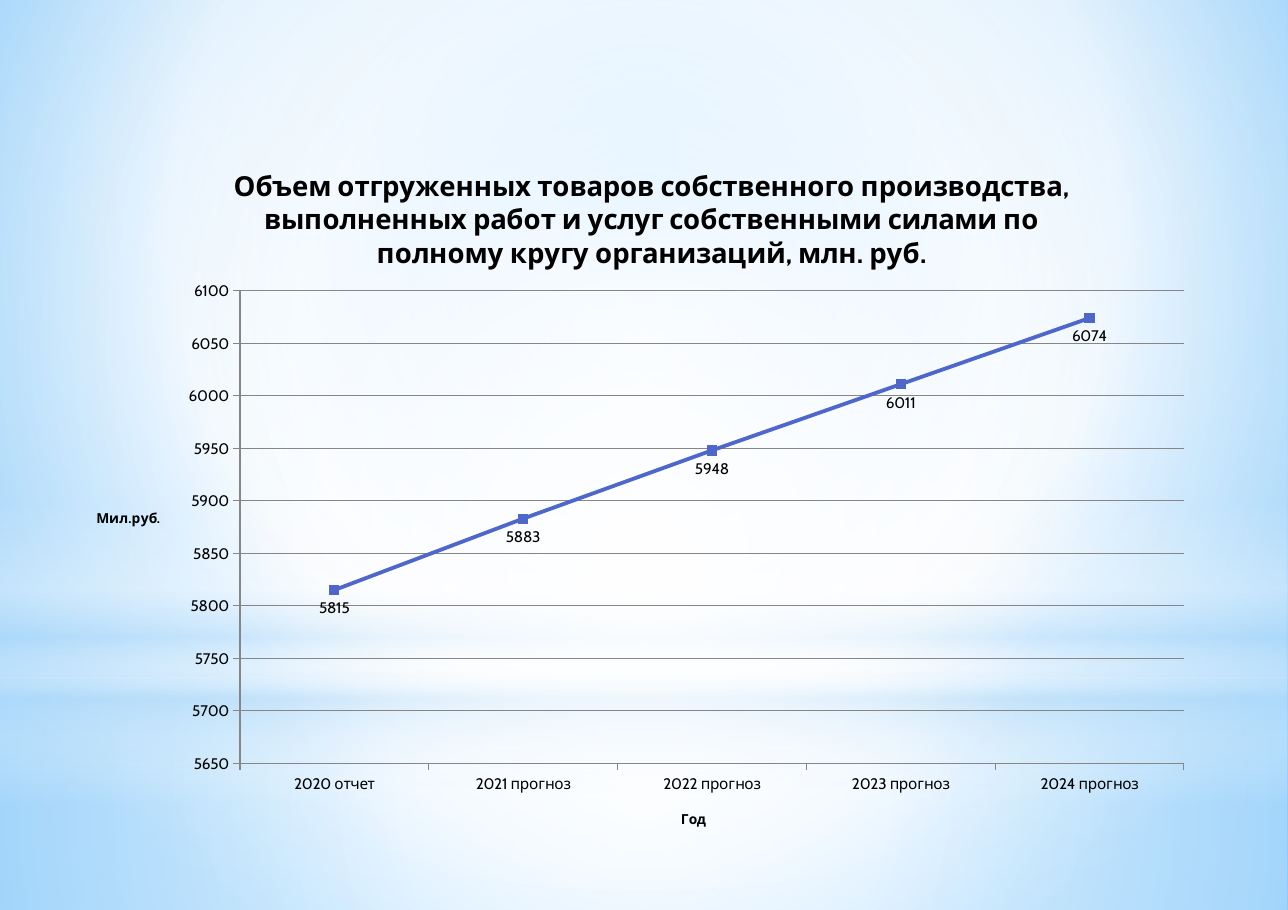
from lxml import etree
from pptx import Presentation
from pptx.chart.data import CategoryChartData
from pptx.dml.color import RGBColor
from pptx.enum.chart import (XL_CHART_TYPE, XL_LABEL_POSITION,
                             XL_MARKER_STYLE, XL_TICK_MARK)
from pptx.enum.shapes import MSO_SHAPE
from pptx.oxml.ns import qn
from pptx.util import Pt

LINE = XL_CHART_TYPE.LINE_MARKERS
BELOW = XL_LABEL_POSITION.BELOW
SQUARE = XL_MARKER_STYLE.SQUARE
OUTSIDE = XL_TICK_MARK.OUTSIDE
RECT = MSO_SHAPE.RECTANGLE
OVAL = MSO_SHAPE.OVAL

WIDTH, HEIGHT = 841.68, 594.72
FONT = "Cabin"
COLORS = {"white": "FFFFFF", "pale": "B4DCFA", "sky": "9ED5FF",
          "deep": "5BB9FF", "black": "000000", "grid": "868686",
          "line": "4E67C8"}
CENTER = (50, 50, 50, 50)
TITLE = ("Объем отгруженных товаров собственного производства, "
         "выполненных работ и услуг собственными силами по "
         "полному кругу организаций, млн. руб.")
DATA = {"2020 отчет": 5815, "2021 прогноз": 5883, "2022 прогноз": 5948,
        "2023 прогноз": 6011, "2024 прогноз": 6074}


def color(name):
    """Return the named colour."""
    return RGBColor.from_string(COLORS[name])


def add_fade(owner, fill, stops, focus=None):
    """Fill with (place, colour, opacity) stops, round if a focus is given."""
    fill.solid()
    old = owner.find(".//" + qn("a:solidFill"))
    grad = etree.Element(qn("a:gradFill"), rotWithShape="1")
    steps = etree.SubElement(grad, qn("a:gsLst"))
    for place, name, alpha in stops:
        stop = etree.SubElement(steps, qn("a:gs"), pos=str(place * 1000))
        tint = etree.SubElement(stop, qn("a:srgbClr"), val=COLORS[name])
        etree.SubElement(tint, qn("a:alpha"), val=str(alpha * 1000))
    if focus:
        way = etree.SubElement(grad, qn("a:path"), path="circle")
        sides = {s: str(v * 1000) for s, v in zip("ltrb", focus)}
        etree.SubElement(way, qn("a:fillToRect"), **sides)
    else:
        etree.SubElement(grad, qn("a:lin"), ang="5400000", scaled="0")
    old.getparent().replace(old, grad)


def add_glow(slide, kind, top, height, stops, focus=None):
    """Add a full-width soft shape."""
    shape = slide.shapes.add_shape(kind, 0, Pt(top), Pt(WIDTH), Pt(height))
    shape.shadow.inherit = False
    shape.line.fill.background()
    add_fade(shape._element, shape.fill, stops, focus)


def set_place(owner, index, inner=False, **spots):
    """Give a chart part a fixed place, in shares of the chart."""
    for old in owner.findall(qn("c:layout")):
        owner.remove(old)
    layout = etree.Element(qn("c:layout"))
    manual = etree.SubElement(layout, qn("c:manualLayout"))
    if inner:
        etree.SubElement(manual, qn("c:layoutTarget"), val="inner")
    for mode in ("xMode", "yMode"):
        etree.SubElement(manual, qn("c:" + mode), val="edge")
    for key, value in spots.items():
        etree.SubElement(manual, qn("c:" + key), val=str(value))
    owner.insert(index, layout)


def set_title(title, text, size, x, y):
    """Write and place a level bold title."""
    title.text_frame.text = text
    font = title.text_frame.paragraphs[0].runs[0].font
    font.name, font.size, font.bold = FONT, Pt(size), True
    font.color.rgb = color("black")
    body = title._element.find(".//" + qn("a:bodyPr"))
    body.set("rot", "0")
    body.set("vert", "horz")
    set_place(title._element, 1, x=x, y=y)


def set_line(line, name, width):
    """Set the colour and width of a line."""
    line.color.rgb = color(name)
    line.width = Pt(width)


def set_axis(axis, text, x, y):
    """Style an axis and give it a title."""
    axis.major_tick_mark = OUTSIDE
    set_line(axis.format.line, "grid", 0.75)
    set_title(axis.axis_title, text, 9, x, y)


def style_series(series):
    """Style the line, its markers and its labels."""
    series.smooth = False
    set_line(series.format.line, "line", 2.5)
    series.marker.style = SQUARE
    series.marker.size = 6
    series.marker.format.fill.solid()
    series.marker.format.fill.fore_color.rgb = color("line")
    set_line(series.marker.format.line, "line", 0.75)
    labels = series.data_labels
    labels.show_value = True
    labels.position = BELOW
    labels.number_format = "0"
    labels.number_format_is_linked = False


def add_graph(slide):
    """Add the line chart of shipped goods."""
    data = CategoryChartData(number_format="0")
    data.categories = list(DATA)
    data.add_series("Series 1", list(DATA.values()))
    chart = slide.shapes.add_chart(LINE, Pt(54), Pt(87.12), Pt(734.4),
                                   Pt(468), data).chart
    chart.has_legend = False
    chart.font.name, chart.font.size = FONT, Pt(10)
    chart.font.color.rgb = color("black")
    set_title(chart.chart_title, TITLE, 18, 0.13, 0.04)
    set_axis(chart.category_axis, "Год", 0.53, 0.94)
    axis = chart.value_axis
    set_axis(axis, "Мил.руб.", 0.01, 0.52)
    axis.minimum_scale, axis.maximum_scale = 5650, 6100
    axis.major_unit = 50
    axis.tick_labels.number_format = "0"
    axis.tick_labels.number_format_is_linked = False
    set_line(axis.major_gridlines.format.line, "grid", 0.75)
    chart.plots[0].vary_by_categories = False
    style_series(chart.plots[0].series[0])
    plot = chart._chartSpace.find(".//" + qn("c:plotArea"))
    set_place(plot, 0, inner=True, x=0.14, y=0.22, w=0.84, h=0.66)


def main():
    """Build the slide."""
    deck = Presentation()
    deck.slide_width, deck.slide_height = Pt(WIDTH), Pt(HEIGHT)
    slide = deck.slides.add_slide(deck.slide_layouts[6])
    add_fade(slide._element, slide.background.fill,
             [(0, "sky", 100), (60, "white", 100), (100, "deep", 100)],
             (20, 10, 20, 60))
    add_glow(slide, RECT, 442.8, 151.92,
             [(0, "white", 91), (37, "white", 76), (100, "pale", 79)], CENTER)
    add_glow(slide, RECT, 0, 442.8,
             [(0, "white", 89), (48, "white", 62), (100, "pale", 79)], CENTER)
    add_glow(slide, RECT, 326.88, 198,
             [(0, "white", 0), (29, "white", 30), (45, "pale", 40),
              (55, "white", 26), (65, "pale", 60), (100, "white", 0)])
    add_glow(slide, OVAL, 138.96, 442.8,
             [(0, "white", 100), (56, "white", 0)], CENTER)
    add_graph(slide)
    deck.save("out.pptx")


if __name__ == "__main__":
    main()
